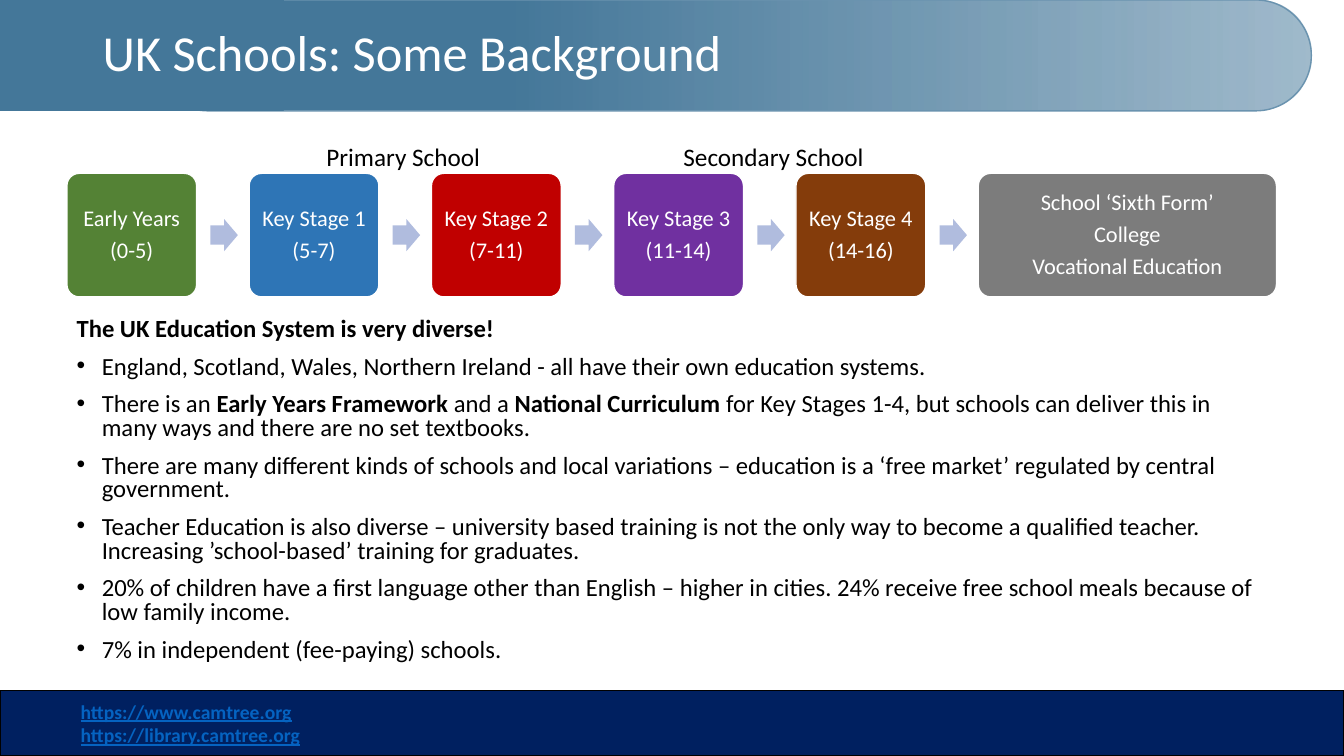
import dataclasses
import typing

import lxml.etree
import pptx
import pptx.dml.color
import pptx.enum.shapes
import pptx.enum.text
import pptx.oxml.ns
import pptx.util

Pt = pptx.util.Pt
SHAPE = pptx.enum.shapes.MSO_SHAPE
ALIGN = pptx.enum.text.PP_ALIGN
ANCHOR = pptx.enum.text.MSO_ANCHOR

FONT = "Calibri"
COLOURS = {
    "white": "FFFFFF",
    "black": "000000",
    "header": "447799",
    "header_edge": "6A93AF",
    "footer": "002060",
    "link": "0563C1",
    "arrow": "B0BCDE",
    "green": "548235",
    "blue": "2E75B6",
    "red": "C00000",
    "purple": "7030A0",
    "brown": "843C0B",
    "grey": "7C7C7C",
}


@dataclasses.dataclass
class Box:
    left: float
    top: float
    width: float
    height: float

    def lengths(self) -> list[pptx.util.Length]:
        return [Pt(value) for value in dataclasses.astuple(self)]


@dataclasses.dataclass
class Stage:
    text: str
    colour: str
    width: float = 92.7


@dataclasses.dataclass
class SchoolLabel:
    text: str
    box: Box


STAGES = [
    Stage("Early Years\n(0-5)", "green"),
    Stage("Key Stage 1\n(5-7)", "blue"),
    Stage("Key Stage 2\n(7-11)", "red"),
    Stage("Key Stage 3\n(11-14)", "purple"),
    Stage("Key Stage 4\n(14-16)", "brown"),
    Stage("School ‘Sixth Form’\nCollege\nVocational Education", "grey", 213),
]
STAGE_LEFT, STAGE_TOP, STAGE_HEIGHT, STAGE_PITCH = 47.8, 123.8, 88.3, 130.2
ARROW_OFFSET, ARROW_WIDTH, ARROW_HEIGHT = 102.5, 19.6, 23

SCHOOL_LABELS = [
    SchoolLabel("Primary School", Box(225.4, 97.2, 125.3, 28.8)),
    SchoolLabel("Secondary School", Box(480.2, 97.2, 144.7, 28.8)),
]

BODY_HEADING = "The UK Education System is very diverse!"
# Phrases between ** marks are bold.
BODY_POINTS = [
    "England, Scotland, Wales, Northern Ireland - all have their own education systems.",
    "There is an **Early Years Framework **and a **National Curriculum **for Key Stages 1-4, "
    "but schools can deliver this in many ways and there are no set textbooks.",
    "There are many different kinds of schools and local variations – education is a "
    "‘free market’ regulated by central government.",
    "Teacher Education is also diverse – university based training is not the only way to "
    "become a qualified teacher. Increasing ’school-based’ training for graduates.",
    "20% of children have a first language other than English – higher in cities. "
    "24% receive free school meals because of low family income.",
    "7% in independent (fee-paying) schools.",
]


def rgb(name: str) -> pptx.dml.color.RGBColor:
    return pptx.dml.color.RGBColor.from_string(COLOURS[name])


def add_panel(slide, kind, box: Box, fill: str, line: typing.Optional[str] = None):
    shape = slide.shapes.add_shape(kind, *box.lengths())
    shape.shadow.inherit = False
    shape.fill.solid()
    shape.fill.fore_color.rgb = rgb(fill)
    if line:
        shape.line.color.rgb = rgb(line)
        shape.line.width = Pt(1)
    else:
        shape.line.fill.background()
    return shape


def format_runs(paragraph, size: float, colour: str) -> None:
    for run in paragraph.runs:
        run.font.name = FONT
        run.font.size = Pt(size)
        run.font.color.rgb = rgb(colour)


def add_header(slide) -> None:
    """Place the bar behind the title, then format the title."""
    title = slide.shapes.title
    bar = add_panel(slide, SHAPE.ROUNDED_RECTANGLE, Box(108.7, 0, 828, 79.2),
                    "header", "header_edge")
    bar.adjustments[0] = 0.5
    bar.fill.gradient()
    bar.fill.gradient_angle = 0
    for stop, position in zip(bar.fill.gradient_stops, (0.3, 1)):
        stop.color.rgb = rgb("header")
        stop.position = position
    end_colour = bar.element.findall(".//" + pptx.oxml.ns.qn("a:gs"))[-1][0]
    lxml.etree.SubElement(end_colour, pptx.oxml.ns.qn("a:alpha"), val="50000")
    square_end = add_panel(slide, SHAPE.RECTANGLE, Box(0, 0, 202.3, 79.2), "header", "header")
    for shape in (bar, square_end):
        title.element.addprevious(shape.element)

    title.left, title.top, title.width, title.height = Box(66.2, 0, 828, 79.2).lengths()
    title.text_frame.text = "UK Schools: Some Background"
    title.text_frame.vertical_anchor = ANCHOR.MIDDLE
    paragraph = title.text_frame.paragraphs[0]
    paragraph.alignment = ALIGN.LEFT
    paragraph.line_spacing = 0.9
    format_runs(paragraph, 36, "white")


def add_stages(slide) -> None:
    for index, stage in enumerate(STAGES):
        left = STAGE_LEFT + index * STAGE_PITCH
        card = add_panel(slide, SHAPE.ROUNDED_RECTANGLE,
                         Box(left, STAGE_TOP, stage.width, STAGE_HEIGHT), stage.colour, "white")
        card.adjustments[0] = 0.1
        frame = card.text_frame
        frame.margin_left = frame.margin_right = Pt(3)
        frame.vertical_anchor = ANCHOR.MIDDLE
        frame.text = stage.text
        for paragraph in frame.paragraphs:
            paragraph.alignment = ALIGN.CENTER
            paragraph.line_spacing = 0.9
            paragraph.space_after = Pt(5.6)
            format_runs(paragraph, 16, "white")
        if index < len(STAGES) - 1:
            arrow_top = STAGE_TOP + (STAGE_HEIGHT - ARROW_HEIGHT) / 2
            arrow = add_panel(slide, SHAPE.RIGHT_ARROW,
                              Box(left + ARROW_OFFSET, arrow_top, ARROW_WIDTH, ARROW_HEIGHT), "arrow")
            arrow.adjustments[0] = 0.6


def add_school_label(slide, label: SchoolLabel) -> None:
    text_box = slide.shapes.add_textbox(*label.box.lengths())
    text_box.text_frame.word_wrap = False
    text_box.text_frame.text = label.text
    paragraph = text_box.text_frame.paragraphs[0]
    paragraph.alignment = ALIGN.CENTER
    format_runs(paragraph, 18, "black")


def set_bullet(paragraph, bullet: typing.Optional[str]) -> None:
    properties = paragraph._p.get_or_add_pPr()
    indent = Pt(18) if bullet else 0
    properties.set("marL", str(indent))
    properties.set("indent", str(-indent))
    if bullet:
        lxml.etree.SubElement(properties, pptx.oxml.ns.qn("a:buChar"), char=bullet)
    else:
        lxml.etree.SubElement(properties, pptx.oxml.ns.qn("a:buNone"))


def fill_body(body) -> None:
    body.left, body.top, body.width, body.height = Box(47.5, 223.9, 864.7, 262.1).lengths()
    frame = body.text_frame
    frame.auto_size = pptx.enum.text.MSO_AUTO_SIZE.NONE
    for index, text in enumerate([f"**{BODY_HEADING}**", *BODY_POINTS]):
        paragraph = frame.add_paragraph() if index else frame.paragraphs[0]
        set_bullet(paragraph, "•" if index else None)
        paragraph.line_spacing = 0.8
        paragraph.space_before = Pt(10 if index else 0)
        for part_index, part in enumerate(text.split("**")):
            if part:
                run = paragraph.add_run()
                run.text = part
                run.font.bold = part_index % 2 == 1
        format_runs(paragraph, 17.6, "black")


def add_footer(slide) -> None:
    footer = add_panel(slide, SHAPE.RECTANGLE, Box(0, 493.2, 960, 46.8), "footer", "black")
    frame = footer.text_frame
    frame.margin_left = Pt(57.6)
    frame.vertical_anchor = ANCHOR.MIDDLE
    frame.text = "https://www.camtree.org\nhttps://library.camtree.org"
    for paragraph in frame.paragraphs:
        paragraph.alignment = ALIGN.LEFT
        format_runs(paragraph, 14, "link")
        for run in paragraph.runs:
            run.font.bold = run.font.underline = True


def main() -> None:
    presentation = pptx.Presentation()
    presentation.slide_width, presentation.slide_height = Pt(960), Pt(540)
    slide = presentation.slides.add_slide(presentation.slide_layouts[1])
    add_header(slide)
    fill_body(slide.placeholders[1])
    add_stages(slide)
    for label in SCHOOL_LABELS:
        add_school_label(slide, label)
    add_footer(slide)
    presentation.save("out.pptx")


if __name__ == "__main__":
    main()
